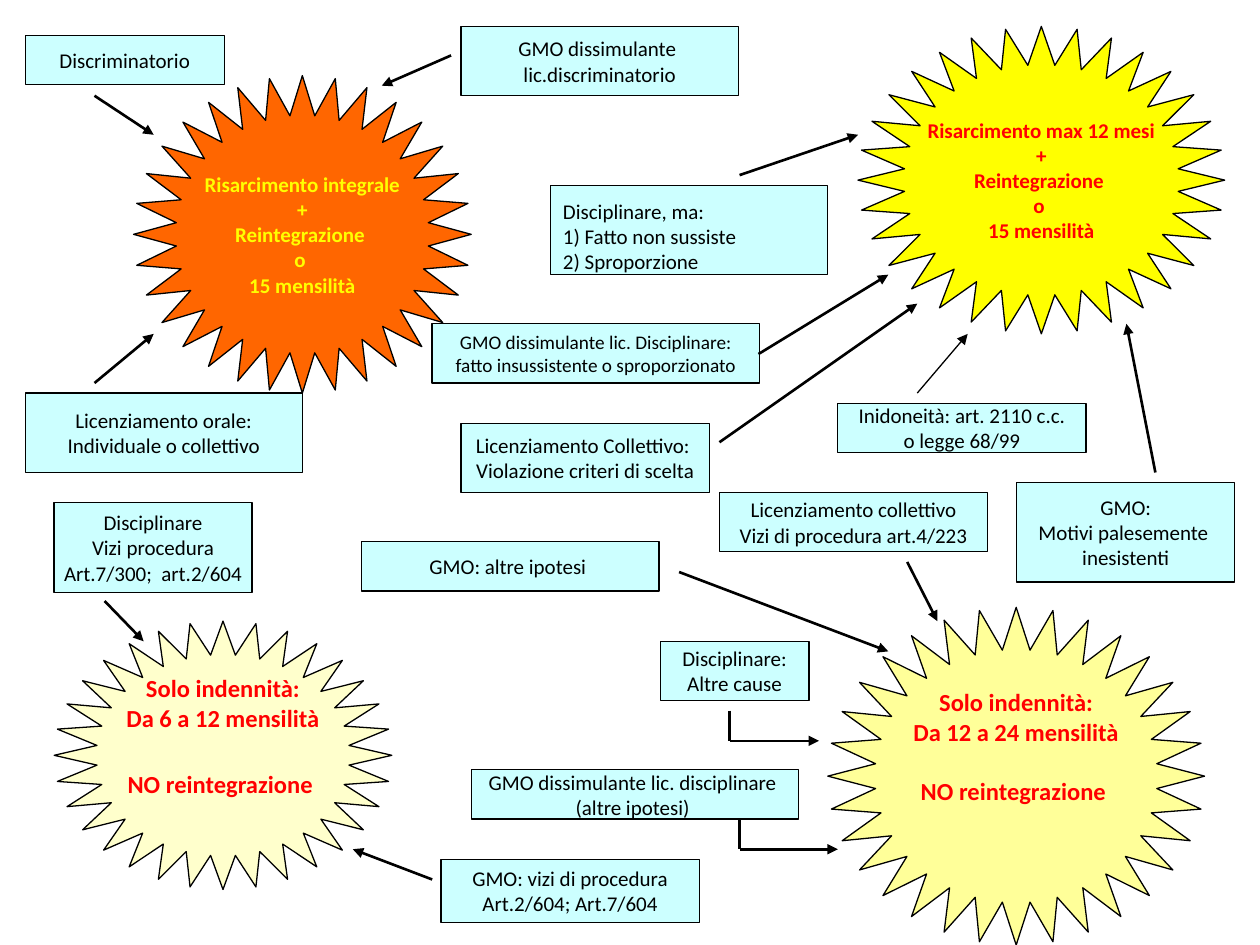
import dataclasses

import lxml.etree
import pptx
import pptx.dml.color
import pptx.enum.shapes
import pptx.enum.text
import pptx.oxml.ns
import pptx.util

Inches = pptx.util.Inches
Shape = pptx.enum.shapes.MSO_SHAPE
Align = pptx.enum.text.PP_ALIGN


@dataclasses.dataclass(frozen=True)
class Theme:
    font: str = "Calibri"
    ink: str = "000000"
    box: str = "CCFFFF"
    red: str = "FF0000"
    yellow: str = "FFFF00"
    orange: str = "FF6600"
    pale: str = "FFFF99"
    cream: str = "FFFFCC"
    small: float = 11
    body: float = 12
    large: float = 14
    hair: float = 0.25
    thin: float = 0.75
    thick: float = 1.5


def color(code):
    return pptx.dml.color.RGBColor.from_string(code)


class Chart:
    """Draws boxes, stars and arrows on one slide in one style."""

    def __init__(self, slide, theme):
        self.slide = slide
        self.theme = theme

    def shape(self, kind, place, fill, line):
        item = self.slide.shapes.add_shape(kind, *map(Inches, place))
        item.shadow.inherit = False
        item.fill.solid()
        item.fill.fore_color.rgb = color(fill)
        item.line.color.rgb = color(self.theme.ink)
        item.line.width = pptx.util.Pt(line)
        return item

    def label(self, item, text, size, ink, bold=False, align=Align.CENTER,
              top=0.05, bottom=0.05):
        frame = item.text_frame
        frame.text = text
        frame.word_wrap = False
        frame.vertical_anchor = pptx.enum.text.MSO_ANCHOR.MIDDLE
        frame.margin_top = Inches(top)
        frame.margin_bottom = Inches(bottom)
        for part in frame.paragraphs:
            part.alignment = align
            for run in part.runs:
                run.font.name = self.theme.font
                run.font.size = pptx.util.Pt(size)
                run.font.bold = bold
                run.font.color.rgb = color(ink)
        return frame

    def box(self, place, text, size=None, line=None, **style):
        theme = self.theme
        item = self.shape(Shape.RECTANGLE, place, theme.box, line or theme.thin)
        self.label(item, text, size or theme.body, theme.ink, **style)

    def star(self, place, text, fill, ink, size, gap=0, bottom=0.05):
        """Add a 32-point star; gap is the space above its last line."""
        item = self.shape(Shape.STAR_32_POINT, place, fill, self.theme.thin)
        item.adjustments[0] = 0.375
        frame = self.label(item, text, size, ink, bold=True, bottom=bottom)
        if gap:
            frame.paragraphs[-1].space_before = pptx.util.Pt(gap)

    def arrow(self, ends, width=None, head=True):
        item = self.slide.shapes.add_connector(
            pptx.enum.shapes.MSO_CONNECTOR.STRAIGHT, *map(Inches, ends))
        item.line.color.rgb = color(self.theme.ink)
        item.line.width = pptx.util.Pt(width or self.theme.thick)
        qn = pptx.oxml.ns.qn
        props = item._element.spPr
        if head:
            lxml.etree.SubElement(props.find(qn("a:ln")), qn("a:tailEnd"),
                                  type="triangle")
        lxml.etree.SubElement(props, qn("a:effectLst"))

    def elbow(self, left, top, right, bottom):
        self.arrow((left, bottom, right, bottom))
        self.arrow((left, top, left, bottom), head=False)


def main():
    deck = pptx.Presentation()
    deck.slide_width, deck.slide_height = Inches(10), Inches(7.5)
    theme = Theme()
    chart = Chart(deck.slides.add_slide(deck.slide_layouts[6]), theme)

    rights = "\n+\nReintegrazione \no \n15 mensilità"
    chart.star((6.81, 0.21, 2.91, 2.44), "Risarcimento max 12 mesi" + rights,
               theme.yellow, theme.red, theme.body)
    chart.star((1.06, 0.6, 2.68, 2.52), "Risarcimento integrale" + rights,
               theme.orange, theme.yellow, theme.body)
    money = "Solo indennità:\nDa {} mensilità\nNO reintegrazione "
    chart.star((6.57, 4.82, 2.99, 2.68), money.format("12 a 24"),
               theme.pale, theme.red, theme.large, gap=17, bottom=0.52)
    chart.star((0.43, 4.93, 2.68, 2.13), money.format("6 a 12"),
               theme.cream, theme.red, theme.large, gap=21, bottom=0.36)

    chart.box((0.2, 0.28, 1.58, 0.39), "Discriminatorio", line=theme.hair)
    chart.box((3.43, 2.57, 2.6, 0.47),
              "GMO dissimulante lic. Disciplinare:\n"
              "fatto insussistente o sproporzionato", size=theme.small)
    chart.box((4.37, 1.47, 2.2, 0.71),
              "Disciplinare, ma:\n1) Fatto non sussiste\n2) Sproporzione",
              align=Align.LEFT, top=0.1, bottom=0)
    boxes = [
        ((0.2, 3.12, 2.2, 0.63), "Licenziamento orale:\nIndividuale o collettivo"),
        ((3.66, 3.36, 1.97, 0.55),
         "Licenziamento Collettivo: \nViolazione criteri di scelta"),
        ((5.24, 5.09, 1.18, 0.47), "Disciplinare:\nAltre cause"),
        ((3.66, 0.21, 2.2, 0.55), "GMO dissimulante \nlic.discriminatorio"),
        ((2.87, 4.3, 2.36, 0.39), "GMO: altre ipotesi "),
        ((6.65, 3.2, 1.97, 0.39), "Inidoneità: art. 2110 c.c.\no legge 68/99"),
        ((8.07, 3.83, 1.73, 0.79), "GMO:\nMotivi palesemente \ninesistenti"),
        ((5.71, 3.91, 2.13, 0.47),
         "Licenziamento collettivo\nVizi di procedura art.4/223"),
        ((0.43, 3.99, 1.57, 0.71),
         "Disciplinare\nVizi procedura\nArt.7/300;  art.2/604"),
        ((3.5, 6.82, 2.05, 0.5), "GMO: vizi di procedura\nArt.2/604; Art.7/604"),
        ((3.74, 6.11, 2.6, 0.39),
         "GMO dissimulante lic. disciplinare \n(altre ipotesi) "),
    ]
    for place, text in boxes:
        chart.box(place, text)

    arrows = [
        (0.75, 3.04, 1.22, 2.65),
        (0.75, 0.76, 1.22, 1.07),
        (3.58, 0.44, 3.03, 0.68),
        (5.87, 1.39, 6.81, 1.07),
        (5.39, 4.54, 7.05, 5.17),
        (0.83, 4.77, 1.14, 5.09),
        (5.71, 3.51, 7.28, 2.41),
        (7.2, 4.46, 7.44, 4.93),
        (9.17, 3.75, 8.94, 2.57),
        (6.02, 2.81, 7.05, 2.18),
        (3.43, 6.98, 2.8, 6.74),
    ]
    for ends in arrows:
        chart.arrow(ends)
    chart.arrow((7.28, 3.12, 7.68, 2.65), width=theme.thin)
    chart.elbow(5.79, 5.64, 6.5, 5.88)
    chart.elbow(5.87, 6.51, 6.65, 6.74)

    deck.save("out.pptx")


if __name__ == "__main__":
    main()
